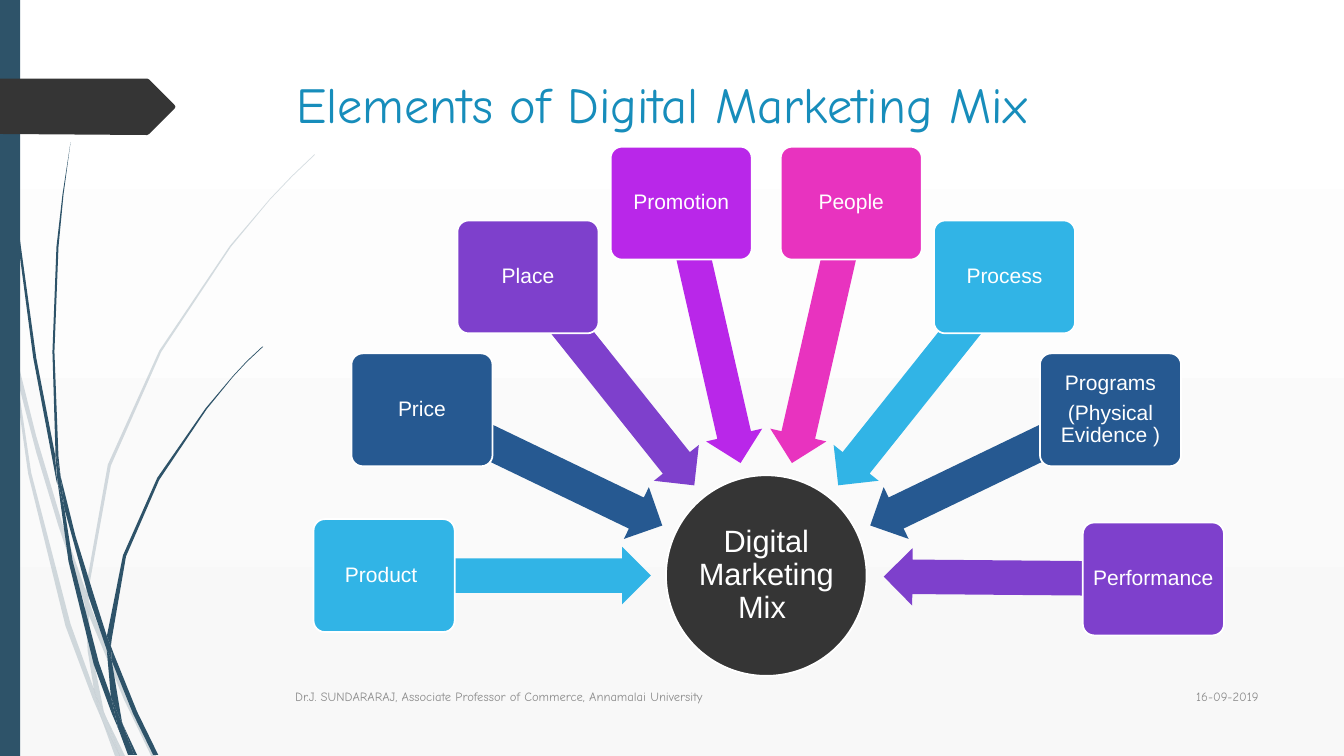
import math
from dataclasses import dataclass

from lxml import etree
from pptx import Presentation
from pptx import util as u
from pptx.dml.color import RGBColor
from pptx.enum import shapes, text
from pptx.oxml import ns

NAVY, CHARCOAL, WHITE, GREY = "2E5369", "353535", "FFFFFF", "8C8C8C"
CYAN, BLUE, PURPLE = "31B4E6", "265991", "7E40CC"
HUB_X, HUB_Y, HUB_SIZE = 7.6, 5.71, 1.99
BOX_WIDTH, BOX_HEIGHT = 1.4, 1.12
ARROW_LENGTH, ARROW_HEIGHT = 2.65, 0.57

Outline = list[tuple[float, float]]


@dataclass(frozen=True)
class Element:
    label: str
    color: str
    angle: float  # degrees clockwise from the left of the hub
    box_radius: float = 3.79
    arrow_radius: float = 2.47


STEP = 180 / 7
ELEMENTS = [
    Element("Product ", CYAN, 0),
    Element("Price", BLUE, STEP),
    Element("Place", PURPLE, 2 * STEP),
    Element("Promotion", "B927E9", 3 * STEP),
    Element("People", "E833BF", 4 * STEP),
    Element("Process", CYAN, 5 * STEP),
    Element("Programs\n(Physical Evidence )", BLUE, 6 * STEP),
    Element("Performance", PURPLE, 180.5, 3.84, 2.49),
]

PALE_STEMS: list[Outline] = [
    [(0.11, 3.5), (0.09, 3.22), (0, 2.82), (0, 2.99), (0.1, 3.44)],
    [(0.58, 5.22), (0.84, 5.99), (0.85, 5.86), (0.62, 5.2), (0.36, 4.33), (0.14, 3.45),
     (0.17, 3.76), (0.36, 4.49)],
    [(0.92, 6.07), (0.88, 5.96), (0.88, 6.1), (1.23, 6.94), (1.5, 7.5), (1.55, 7.5),
     (1.27, 6.92)],
    [(1.19, 7.5), (1.24, 7.5), (1.05, 7.11)],
    [(0.93, 6.83), (0.7, 6.19), (0.31, 4.69), (0.17, 3.76), (0.11, 3.5), (0.28, 4.7),
     (0.65, 6.21), (0.92, 6.93), (1.01, 7.14), (0.99, 7.07)],
    [(0.84, 5.99), (0.87, 6.46), (0.93, 6.83), (0.96, 6.92), (1.05, 7.11), (1.03, 7.06),
     (0.91, 6.46), (0.88, 6.1), (0.88, 6.08)],
    [(0.88, 5.84), (1.1, 4.62), (1.6, 3.49), (2.29, 2.45), (2.68, 1.98), (2.9, 1.75),
     (3.12, 1.54), (3.12, 1.53), (2.89, 1.75), (2.68, 1.97), (2.28, 2.44), (1.58, 3.48),
     (1.07, 4.61), (0.85, 5.84), (0.85, 5.86), (0.88, 5.96)],
    [(1.01, 7.14), (1.14, 7.5), (1.19, 7.5)],
    [(0.88, 6.08), (0.88, 6.1), (0.88, 5.96), (0.85, 5.86), (0.84, 5.99)],
    [(0.96, 6.92), (0.93, 6.83), (0.99, 7.07), (1.01, 7.14), (1.19, 7.5), (1.05, 7.11)],
]
DARK_STEMS: list[Outline] = [
    [(0.07, 1.1), (0.17, 2.33), (0.33, 3.55), (0.56, 4.77), (0.57, 4.81), (0.55, 4.57),
     (0.55, 4.53), (0.36, 3.55), (0.19, 2.32), (0.08, 1.09), (0.05, 0.48), (0.04, 0),
     (0.03, 0), (0.04, 0.48)],
    [(0.88, 5.92), (1.06, 6.45), (1.06, 6.31), (0.93, 5.9), (0.75, 5.32), (0.6, 4.72),
     (0.64, 5.05)],
    [(1.13, 6.49), (1.1, 6.41), (1.11, 6.56), (1.32, 7.08), (1.52, 7.49), (1.57, 7.49),
     (1.36, 7.06)],
    [(1.1, 6.91), (0.98, 6.57), (0.72, 5.56), (0.64, 5.05), (0.57, 4.77), (0.68, 5.57),
     (0.93, 6.59), (1.11, 7.08), (1.17, 7.22), (1.16, 7.17)],
    [(0.6, 4.72), (0.58, 4.53), (0.54, 3.49), (0.58, 2.45), (0.63, 1.93), (0.7, 1.41),
     (0.62, 1.93), (0.56, 2.45), (0.52, 3.49), (0.55, 4.49)],
    [(1.33, 7.49), (1.36, 7.49), (1.22, 7.19)],
    [(0.57, 4.77), (0.64, 5.05), (0.6, 4.72), (0.55, 4.49), (0.55, 4.53)],
    [(1.11, 6.33), (1.25, 5.52), (1.58, 4.76), (2.05, 4.06), (2.31, 3.74), (2.45, 3.59),
     (2.61, 3.44), (2.6, 3.44), (2.45, 3.58), (2.31, 3.73), (2.04, 4.05), (1.56, 4.74),
     (1.22, 5.51), (1.06, 6.31), (1.1, 6.41)],
    [(1.17, 7.22), (1.27, 7.49), (1.31, 7.49)],
    [(1.06, 6.45), (1.1, 6.91), (1.16, 7.06), (1.22, 7.19), (1.21, 7.16), (1.11, 6.56),
     (1.09, 6.51)],
    [(1.06, 6.45), (1.09, 6.51), (1.11, 6.56), (1.1, 6.41), (1.06, 6.31)],
    [(1.16, 7.06), (1.1, 6.91), (1.16, 7.17), (1.17, 7.22), (1.3, 7.49), (1.33, 7.49),
     (1.22, 7.19)],
]
TAG: Outline = [(0, 0.78), (1.46, 0.78), (1.48, 0.79), (1.73, 1.04), (1.74, 1.06),
                (1.73, 1.08), (1.48, 1.33), (1.46, 1.34), (0, 1.33)]


def rgb(color: str) -> RGBColor:
    return RGBColor.from_string(color)


def paint(shape, color: str, outlined: bool = False, opacity: int = 100) -> None:
    shape.shadow.inherit = False
    shape.fill.solid()
    shape.fill.fore_color.rgb = rgb(color)
    if outlined:
        shape.line.color.rgb = rgb(WHITE)
        shape.line.width = u.Pt(1.25)
    else:
        shape.line.fill.background()
    if opacity < 100:
        color_node = shape.fill._xPr.find(ns.qn("a:solidFill"))[0]
        etree.SubElement(color_node, ns.qn("a:alpha"), val=str(opacity * 1000))


def add_outline(slide, points: Outline, color: str, opacity: int = 100) -> None:
    corners = [(u.Inches(x), u.Inches(y)) for x, y in points]
    builder = slide.shapes.build_freeform(*corners[0])
    builder.add_line_segments(corners[1:], close=True)
    paint(builder.convert_to_shape(), color, opacity=opacity)


def add_centered(slide, kind, x: float, y: float, width: float, height: float,
                 color: str, outlined: bool = False):
    """Add a preset shape by its centre."""
    shape = slide.shapes.add_shape(kind, u.Inches(x - width / 2), u.Inches(y - height / 2),
                                   u.Inches(width), u.Inches(height))
    paint(shape, color, outlined)
    return shape


def write(shape, content: str, *, size: float, color: str, font: str = "Arial",
          align=text.PP_ALIGN.LEFT, anchor=text.MSO_ANCHOR.MIDDLE,
          inset: float | None = None, line_spacing: float = 1, space_after: float = 0) -> None:
    frame = shape.text_frame
    frame.word_wrap = True
    frame.vertical_anchor = anchor
    if inset is not None:
        frame.margin_left = frame.margin_right = u.Inches(inset)
        frame.margin_top = frame.margin_bottom = u.Inches(inset)
    frame.text = content
    for paragraph in frame.paragraphs:
        paragraph.alignment = align
        paragraph.line_spacing = line_spacing
        paragraph.space_after = u.Pt(space_after)
        paragraph.font.size = u.Pt(size)
        paragraph.font.name = font
        paragraph.font.color.rgb = rgb(color)


def add_label(slide, content: str, left: float, top: float, width: float, height: float,
              **style) -> None:
    box = slide.shapes.add_textbox(*map(u.Inches, (left, top, width, height)))
    write(box, content, font="Comic Neue", **style)


def around_hub(angle: float, radius: float) -> tuple[float, float]:
    turn = math.radians(angle)
    return HUB_X - radius * math.cos(turn), HUB_Y - radius * math.sin(turn)


def add_element(slide, element: Element) -> None:
    arrow = add_centered(slide, shapes.MSO_SHAPE.LEFT_ARROW,
                         *around_hub(element.angle, element.arrow_radius),
                         ARROW_LENGTH, ARROW_HEIGHT, element.color)
    arrow.adjustments[0], arrow.adjustments[1] = 0.6, 0.5
    arrow.rotation = (element.angle + 180) % 360
    box = add_centered(slide, shapes.MSO_SHAPE.ROUNDED_RECTANGLE,
                       *around_hub(element.angle, element.box_radius),
                       BOX_WIDTH, BOX_HEIGHT, element.color, outlined=True)
    box.adjustments[0] = 0.1
    write(box, element.label, size=15, color=WHITE, align=text.PP_ALIGN.CENTER,
          inset=0.03, line_spacing=0.9, space_after=5.25)


def add_backdrop(slide) -> None:
    fill = slide.background.fill
    fill.gradient()
    fill.gradient_angle = 270
    for stop, color in zip(fill.gradient_stops, (WHITE, "F8F8F8")):
        stop.color.rgb = rgb(color)
    for stem in PALE_STEMS:
        add_outline(slide, stem, NAVY, opacity=20)
    for stem in DARK_STEMS:
        add_outline(slide, stem, NAVY)
    add_centered(slide, shapes.MSO_SHAPE.RECTANGLE, 0.1, 3.75, 0.2, 7.5, NAVY)
    add_outline(slide, TAG, CHARCOAL)


def main() -> None:
    presentation = Presentation()
    presentation.slide_width, presentation.slide_height = u.Inches(13.33), u.Inches(7.5)
    slide = presentation.slides.add_slide(presentation.slide_layouts[6])
    add_backdrop(slide)
    add_label(slide, "Elements of Digital Marketing Mix", 2.84, 0.68, 9.75, 1.4,
              size=36, color="178DBB", anchor=text.MSO_ANCHOR.TOP)
    hub = add_centered(slide, shapes.MSO_SHAPE.OVAL, HUB_X, HUB_Y, HUB_SIZE, HUB_SIZE,
                       CHARCOAL, outlined=True)
    write(hub, "Digital Marketing Mix ", size=22, color=WHITE, align=text.PP_ALIGN.CENTER,
          inset=0.02, line_spacing=0.9, space_after=7.7)
    for element in ELEMENTS:
        add_element(slide, element)
    add_label(slide, "Dr.J. SUNDARARAJ, Associate Professor of Commerce, Annamalai University",
              2.83, 6.71, 8.33, 0.4, size=9, color=GREY)
    add_label(slide, "16-09-2019", 11.33, 6.7, 1.25, 0.41, size=9, color=GREY,
              align=text.PP_ALIGN.RIGHT)
    presentation.save("out.pptx")


if __name__ == "__main__":
    main()
